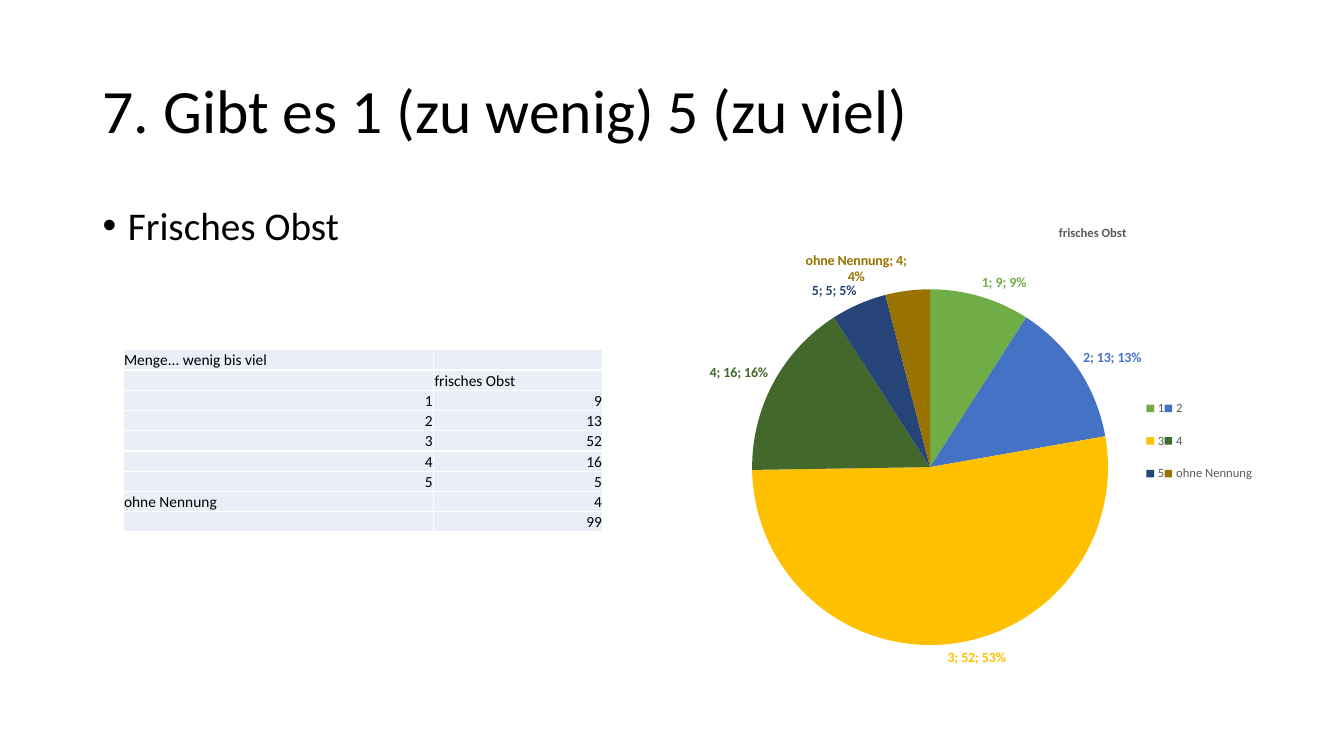
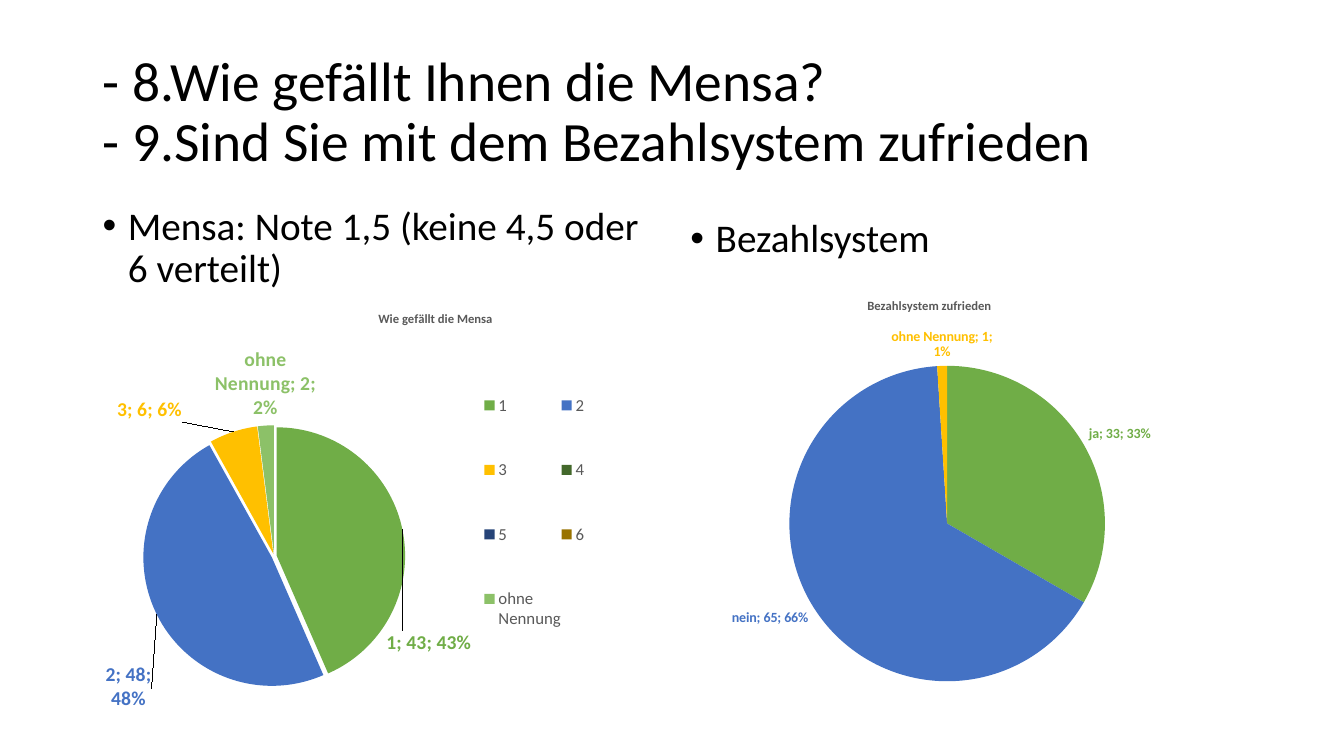
"""Build two survey result slides with a table and three pie charts."""
from dataclasses import dataclass

from lxml.etree import SubElement
from pptx import Presentation
from pptx.chart.data import CategoryChartData
from pptx.dml.color import RGBColor as RGB
from pptx.enum.chart import XL_CHART_TYPE as ChartType
from pptx.enum.chart import XL_LABEL_POSITION as LabelPosition
from pptx.enum.chart import XL_LEGEND_POSITION as LegendPosition
from pptx.enum.text import MSO_ANCHOR as Anchor
from pptx.enum.text import PP_ALIGN as Align
from pptx.oxml import parse_xml
from pptx.oxml.ns import nsdecls, qn
from pptx.util import Inches, Pt


@dataclass(frozen=True)
class Theme:
    font: str = "Calibri"
    text: RGB = RGB(0, 0, 0)
    muted: RGB = RGB(0x59, 0x59, 0x59)
    cell: RGB = RGB(0xEA, 0xEF, 0xF7)
    border: str = "FFFFFF"
    slices: tuple = ("70AD47", "4472C4", "FFC000", "43682B", "264478", "997300", "8CC168")
    title: float = 44
    long_title: float = 39.6
    body: float = 28
    table: float = 11
    chart: float = 10
    chart_title: float = 9


theme = Theme()


def add_text(slide, box, text, size, bullet=False):
    frame = slide.shapes.add_textbox(*map(Inches, box)).text_frame
    frame.word_wrap = True
    frame.vertical_anchor = Anchor.TOP if bullet else Anchor.MIDDLE
    paragraph = frame.paragraphs[0]
    paragraph.text = text
    paragraph.line_spacing = 0.9
    for run in paragraph.runs:
        run.font.name, run.font.size = theme.font, Pt(size)
        run.font.color.rgb = theme.text
    if bullet:
        paragraph.space_before = Pt(10)
        properties = paragraph._p.get_or_add_pPr()
        properties.set("marL", str(Inches(0.25)))
        properties.set("indent", str(Inches(-0.25)))
        SubElement(properties, qn("a:buFont")).set("typeface", "Arial")
        SubElement(properties, qn("a:buChar")).set("char", "•")


def set_layout(part, index, inner=False, edge=True, **fractions):
    for old in part.findall(qn("c:layout")):
        part.remove(old)
    target = '<c:layoutTarget val="inner"/>' if inner else ""
    modes = "".join(f'<c:{axis}Mode val="edge"/>' for axis in "xy") if edge else ""
    values = "".join(f'<c:{key} val="{value:.4f}"/>' for key, value in fractions.items())
    part.insert(index, parse_xml(
        f'<c:layout {nsdecls("c")}><c:manualLayout>{target}{modes}{values}'
        '</c:manualLayout></c:layout>'))


deck = Presentation()
deck.slide_width, deck.slide_height = Inches(13.33), Inches(7.5)
fruit_slide, canteen_slide = [deck.slides.add_slide(deck.slide_layouts[6]) for _ in range(2)]

title_box = (0.92, 0.4, 11.5, 1.45)
left_box = (0.92, 2, 5.67, 4.76)
add_text(fruit_slide, title_box, "7. Gibt es 1 (zu wenig) 5 (zu viel)", theme.title)
add_text(fruit_slide, left_box, "Frisches Obst", theme.body, bullet=True)
add_text(canteen_slide, title_box,
         "- 8.Wie gefällt Ihnen die Mensa?\v- 9.Sind Sie mit dem Bezahlsystem zufrieden",
         theme.long_title)
add_text(canteen_slide, left_box, "Mensa: Note 1,5 (keine 4,5 oder 6 verteilt)",
         theme.body, bullet=True)
add_text(canteen_slide, (6.75, 2.12, 5.15, 4.92), "Bezahlsystem", theme.body, bullet=True)

fruit_votes = {"1": 9, "2": 13, "3": 52, "4": 16, "5": 5, "ohne Nennung": 4}
canteen_votes = {"1": 43, "2": 48, "3": 6, "4": None, "5": None, "6": None, "ohne Nennung": 2}
payment_votes = {"ja": 33, "nein": 65, "ohne Nennung": 1}

fruit_rows = [("Menge... wenig bis viel", ""), ("", "frisches Obst")]
fruit_rows += [(answer, str(count)) for answer, count in fruit_votes.items()]
fruit_rows.append(("", str(sum(fruit_votes.values()))))
fruit_table = fruit_slide.shapes.add_table(
    len(fruit_rows), 2, Inches(1.22), Inches(3.47), Inches(4.76), Inches(1.81)).table
fruit_table.first_row = fruit_table.horz_banding = False
for column, width in zip(fruit_table.columns, (3.08, 1.68)):
    column.width = Inches(width)
for row, texts in enumerate(fruit_rows):
    for col, text in enumerate(texts):
        cell = fruit_table.cell(row, col)
        cell.margin_left = cell.margin_right = cell.margin_top = Inches(0.01)
        cell.margin_bottom = 0
        cell.vertical_anchor = Anchor.BOTTOM
        paragraph = cell.text_frame.paragraphs[0]
        paragraph.text = text
        paragraph.alignment = Align.RIGHT if text.isdigit() else Align.LEFT
        for run in paragraph.runs:
            run.font.name, run.font.size = theme.font, Pt(theme.table)
            run.font.color.rgb = theme.text
        if not text:
            SubElement(paragraph._p, qn("a:endParaRPr")).set("sz", str(theme.table * 100))
        for side in "LRTB":
            cell._tc.get_or_add_tcPr().append(parse_xml(
                f'<a:ln{side} {nsdecls("a")} w="{Pt(1)}"><a:solidFill>'
                f'<a:srgbClr val="{theme.border}"/></a:solidFill></a:ln{side}>'))
        cell.fill.solid()
        cell.fill.fore_color.rgb = theme.cell

pies = [
    dict(slide=fruit_slide, title="frisches Obst", votes=fruit_votes,
         box=(6.75, 2, 5.67, 4.76), title_at=(10.48, 2.2), circle=(7.46, 2.87, 3.53),
         legend=(11.37, 3.8, 1.05, 1.15), legend_size=9),
    dict(slide=canteen_slide, title="Wie gefällt die Mensa", votes=canteen_votes,
         box=(0.51, 2.88, 5.43, 4.17), title_at=(3.73, 3.06), circle=(1.42, 4.22, 2.6),
         legend=(4.8, 3.48, 1, 3.2), legend_size=12, label_size=14, explosion=2,
         label_shifts={0: (-0.04, 0.3), 1: (0, 0.17), 2: (-0.09, -0.01)}),
    dict(slide=canteen_slide, title="Bezahlsystem zufrieden", votes=payment_votes,
         box=(6.67, 2.76, 5.06, 4.14), title_at=(8.58, 2.93), circle=(7.83, 3.63, 3.13)),
]
for pie in pies:
    left, top, width, height = pie["box"]
    data = CategoryChartData()
    data.categories = list(pie["votes"])
    data.add_series(pie["title"], list(pie["votes"].values()))
    chart = pie["slide"].shapes.add_chart(
        ChartType.PIE, *map(Inches, pie["box"]), data).chart
    chart.font.name, chart.font.size = theme.font, Pt(theme.chart)
    chart.font.color.rgb = theme.text

    chart.has_title = True
    chart.chart_title.text_frame.text = pie["title"]
    heading = chart.chart_title.text_frame.paragraphs[0].runs[0].font
    heading.name, heading.size, heading.bold = theme.font, Pt(theme.chart_title), True
    heading.color.rgb = theme.muted
    x, y = pie["title_at"]
    set_layout(chart.element.xpath(".//c:title")[0], 1,
               x=(x - left) / width, y=(y - top) / height)

    x, y, diameter = pie["circle"]
    set_layout(chart.element.xpath(".//c:plotArea")[0], 0, inner=True,
               x=(x - left) / width, y=(y - top) / height,
               w=diameter / width, h=diameter / height)

    chart.has_legend = "legend" in pie
    if chart.has_legend:
        chart.legend.position = LegendPosition.RIGHT
        chart.legend.include_in_layout = False
        legend_font = chart.legend.font
        legend_font.name, legend_font.size = theme.font, Pt(pie["legend_size"])
        legend_font.color.rgb = theme.muted
        x, y, w, h = pie["legend"]
        set_layout(chart.element.xpath(".//c:legend")[0], 1,
                   x=(x - left) / width, y=(y - top) / height, w=w / width, h=h / height)

    plot = chart.plots[0]
    plot.vary_by_categories = True
    series = plot.series[0]
    if "explosion" in pie:
        series.format.fill.solid()
        series.format.fill.fore_color.rgb = RGB.from_string(theme.slices[0])
        series.format._element.find(qn("c:spPr")).addnext(
            parse_xml(f'<c:explosion {nsdecls("c")} val="{pie["explosion"]}"/>'))
    labels = series.data_labels
    labels.show_value = labels.show_category_name = labels.show_percentage = True
    labels.position = LabelPosition.OUTSIDE_END
    for index, color in enumerate(theme.slices[:len(pie["votes"])]):
        point = series.points[index]
        point.format.fill.solid()
        point.format.fill.fore_color.rgb = RGB.from_string(color)
        if "explosion" in pie:
            point.format._element.find(qn("c:spPr")).addprevious(
                parse_xml(f'<c:explosion {nsdecls("c")} val="{pie["explosion"]}"/>'))
        label_font = point.data_label.font
        label_font.name, label_font.bold = theme.font, True
        label_font.size = Pt(pie.get("label_size", theme.chart))
        label_font.color.rgb = RGB.from_string(color)
        point.data_label.position = LabelPosition.OUTSIDE_END
    for flag in chart.element.xpath(".//c:dLbl/c:showCatName | .//c:dLbl/c:showPercent"):
        flag.set("val", "1")
    for size_flag in chart.element.xpath(".//c:ser//c:showBubbleSize"):
        size_flag.addnext(parse_xml(f'<c:separator {nsdecls("c")}>; </c:separator>'))
    point_labels = chart.element.xpath(".//c:dLbl")
    for index, (dx, dy) in pie.get("label_shifts", {}).items():
        set_layout(point_labels[index], 1, edge=False, x=dx, y=dy)

deck.save("out.pptx")
